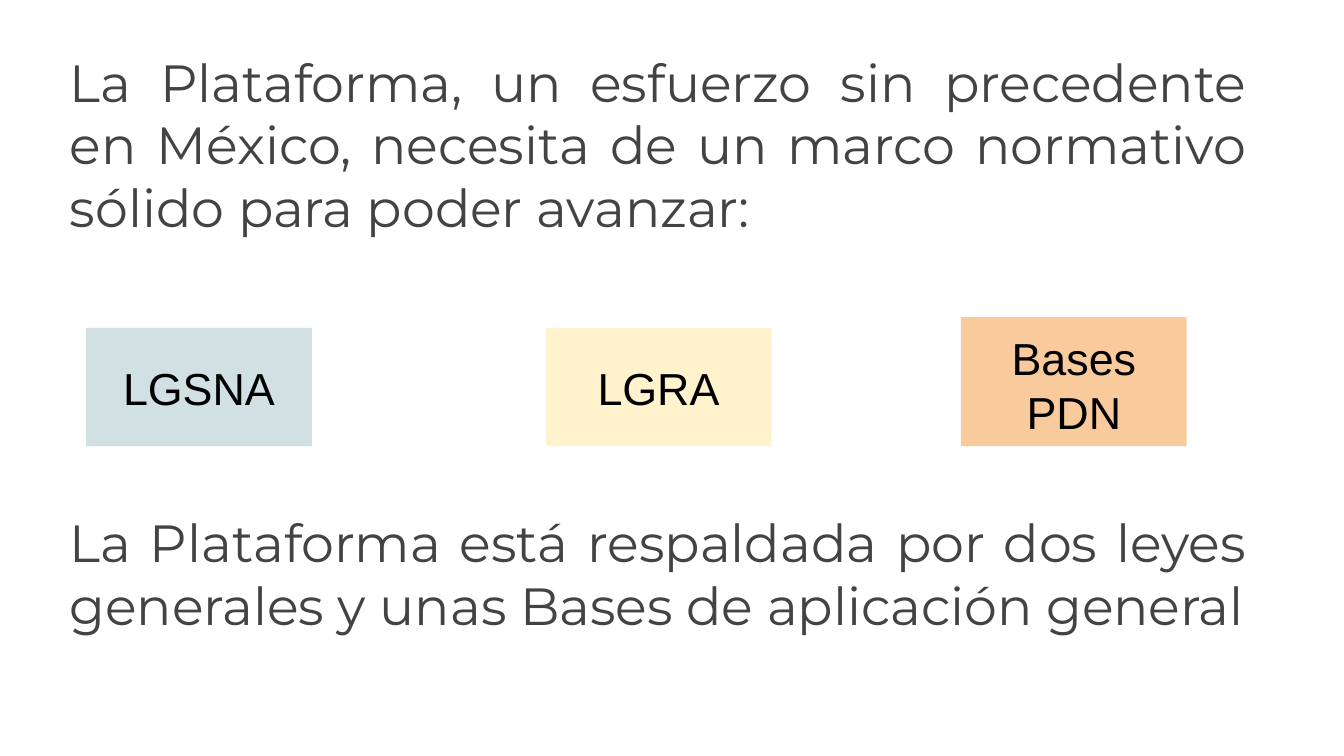
from pptx import Presentation
from pptx.dml.color import RGBColor
from pptx.enum.shapes import MSO_SHAPE
from pptx.enum.text import MSO_ANCHOR, MSO_AUTO_SIZE, PP_ALIGN
from pptx.util import Inches, Pt

GREY = RGBColor(0x43, 0x43, 0x43)
BLACK = RGBColor(0, 0, 0)
BLUE = RGBColor(0xD0, 0xE0, 0xE3)
CREAM = RGBColor(0xFF, 0xF2, 0xCC)
PEACH = RGBColor(0xF9, 0xCB, 0x9C)

WIDE = Inches(10)
HIGH = WIDE * 9 // 16
LEFT, SPAN = 0.42, 8.95
BOX_W, BASE = 1.68, 3.32

PROSE = {"size": Pt(28), "name": "Montserrat", "bold": False}
LABEL = {"size": Pt(24), "name": "Arial", "bold": False}

INTRO = ("La Plataforma, un esfuerzo sin precedente en México, "
         "necesita de un marco normativo sólido para poder avanzar:")
CLOSE = ("La Plataforma está respaldada por dos leyes generales "
         "y unas Bases de aplicación general")

# Label, left edge, height, fill, anchor
LAWS = [
    ("LGSNA", 0.64, 0.88, BLUE, MSO_ANCHOR.MIDDLE),
    ("LGRA", 4.06, 0.88, CREAM, MSO_ANCHOR.MIDDLE),
    ("Bases PDN", 7.15, 0.96, PEACH, MSO_ANCHOR.TOP),
]


def write(shape, text, form, color, align, anchor):
    frame = shape.text_frame
    frame.text = text
    layout = {"word_wrap": True, "auto_size": MSO_AUTO_SIZE.NONE,
              "vertical_anchor": anchor}
    for side in ("left", "top", "right", "bottom"):
        layout["margin_" + side] = Inches(0.1)
    for key, value in layout.items():
        setattr(frame, key, value)
    para = frame.paragraphs[0]
    para.alignment = align
    font = para.runs[0].font
    for key, value in form.items():
        setattr(font, key, value)
    font.color.rgb = color


def place(shape, left, top, width, height):
    spot = {"left": left, "top": top, "width": width, "height": height}
    for key, value in spot.items():
        setattr(shape, key, Inches(value))


def add_prose(shape, text, top, height):
    place(shape, LEFT, top, SPAN, height)
    write(shape, text, PROSE, GREY, PP_ALIGN.JUSTIFY, MSO_ANCHOR.TOP)


def add_law(slide, text, left, height, fill, anchor):
    """Add a law's box, standing on the shared base line."""
    box = slide.shapes.add_shape(MSO_SHAPE.RECTANGLE, 0, 0, 0, 0)
    place(box, left, BASE - height, BOX_W, height)
    box.shadow.inherit = False
    box.fill.solid()
    box.fill.fore_color.rgb = fill
    box.line.fill.background()
    write(box, text, LABEL, BLACK, PP_ALIGN.CENTER, anchor)


def main():
    deck = Presentation()
    deck.slide_width, deck.slide_height = WIDE, HIGH
    slide = deck.slides.add_slide(deck.slide_layouts[5])
    add_prose(slide.shapes.title, INTRO, 0.27, 1.86)
    for law in LAWS:
        add_law(slide, *law)
    add_prose(slide.shapes.add_textbox(0, 0, 0, 0), CLOSE, 3.7, 1.65)
    deck.save("out.pptx")


if __name__ == "__main__":
    main()
